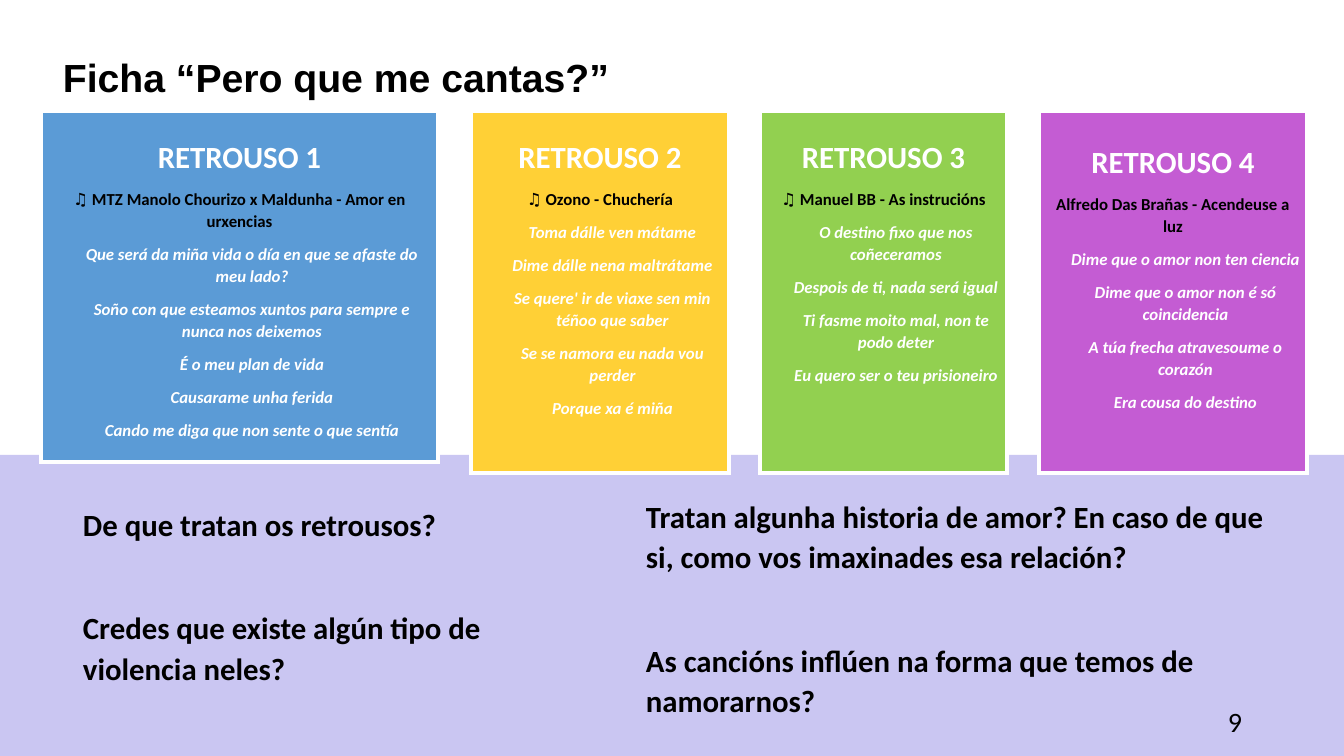
from lxml import etree
from pptx import Presentation
from pptx import util as u
from pptx.dml.color import RGBColor
from pptx.enum import shapes, text
from pptx.oxml import ns

WHITE = RGBColor(0xFF, 0xFF, 0xFF)
BLACK = RGBColor(0, 0, 0)
LILAC = RGBColor(0xCA, 0xC6, 0xF2)
BLUE = RGBColor(0x5B, 0x9B, 0xD6)
GOLD = RGBColor(0xFF, 0xD0, 0x36)
GREEN = RGBColor(0x92, 0xD0, 0x50)
PURPLE = RGBColor(0xC4, 0x5C, 0xD3)

CARDS = [
    (41, 397, 351, 26, BLUE, "RETROUSO 1",
     "♫ MTZ Manolo Chourizo x Maldunha - Amor en urxencias",
     ["Que será da miña vida o día en que se afaste do meu lado?",
      "Soño con que esteamos xuntos para sempre e nunca nos deixemos",
      "É o meu plan de vida",
      "Causarame unha ferida",
      "Cando me diga que non sente o que sentía"]),
    (471, 258, 362, 26, GOLD, "RETROUSO 2",
     "♫ Ozono - Chuchería",
     ["Toma dálle ven mátame",
      "Dime dálle nena maltrátame",
      "Se quere' ir de viaxe sen min téñoo que saber",
      "Se se namora eu nada vou perder",
      "Porque xa é miña"]),
    (760, 247, 362, 26, GREEN, "RETROUSO 3",
     "♫ Manuel BB - As instrucións",
     ["O destino fixo que nos coñeceramos",
      "Despois de ti, nada será igual",
      "Ti fasme moito mal, non te podo deter",
      "Eu quero ser o teu prisioneiro"]),
    (1039, 268, 362, 31, PURPLE, "RETROUSO 4",
     "Alfredo Das Brañas - Acendeuse a luz",
     ["Dime que o amor non ten ciencia",
      "Dime que o amor non é só coincidencia",
      "A túa frecha atravesoume o corazón",
      "Era cousa do destino"]),
]

ASKS = [
    (76, 505, 463, ["De que tratan os retrousos?",
                    "Credes que existe algún tipo de violencia neles?"]),
    (639, 497, 632, ["Tratan algunha historia de amor? En caso de que si, "
                     "como vos imaxinades esa relación?",
                     "As cancións inflúen na forma que temos de namorarnos?"]),
]


def px(n):
    return u.Emu(round(n * 12192000 / 1344))


def style(para, size, color=BLACK, font="Calibri", bold=True, slant=False):
    for run in para.runs:
        face = run.font
        face.name = font
        face.size = u.Pt(size)
        face.bold = bold
        face.italic = slant
        face.color.rgb = color


def space(para, align=text.PP_ALIGN.LEFT):
    para.alignment = align
    para.line_spacing = 1.07
    para.space_after = u.Pt(8)


def edge(cell, color=None):
    props = cell._tc.get_or_add_tcPr()
    for side in ("a:lnL", "a:lnR", "a:lnT", "a:lnB"):
        line = etree.SubElement(props, ns.qn(side))
        if color is None:
            etree.SubElement(line, ns.qn("a:noFill"))
        else:
            line.set("w", str(u.Pt(3)))
            fill = etree.SubElement(line, ns.qn("a:solidFill"))
            etree.SubElement(fill, ns.qn("a:srgbClr")).set("val", str(color))


def add_cell(slide, left, top, width, height, line=None, fill=None):
    table = slide.shapes.add_table(
        1, 1, px(left), px(top), px(width), px(height)).table
    table.first_row = False
    table.horz_banding = False
    cell = table.cell(0, 0)
    cell.margin_left = cell.margin_right = px(7)
    cell.margin_top = cell.margin_bottom = 0
    edge(cell, line)
    if fill is None:
        cell.fill.background()
    else:
        cell.fill.solid()
        cell.fill.fore_color.rgb = fill
    return cell


def add_card(slide, left, width, height, inset, color, name, song, lines):
    cell = add_cell(slide, left, 111, width, height, WHITE, color)
    cell.margin_top = px(inset)
    frame = cell.text_frame
    frame.text = "\n".join([name, song] + lines)
    head, tune, *verse = frame.paragraphs
    for para in frame.paragraphs:
        space(para, text.PP_ALIGN.CENTER)
    style(head, 22, WHITE)
    style(tune, 12)
    for para in verse:
        para._p.get_or_add_pPr().set("marL", str(px(25)))
        style(para, 12, WHITE, slant=True)


def add_asks(slide, left, top, width, lines):
    frame = add_cell(slide, left, top, width, 135).text_frame
    frame.text = "\n".join(lines)
    for para in frame.paragraphs:
        space(para)
        style(para, 22)
    frame.paragraphs[1].space_before = u.Pt(37)


def add_text(slide, left, top, width, height, words):
    frame = slide.shapes.add_textbox(
        px(left), px(top), px(width), px(height)).text_frame
    frame.word_wrap = True
    frame.text = words
    return frame


def add_band(slide):
    band = slide.shapes.add_shape(
        shapes.MSO_SHAPE.RECTANGLE, 0, px(455), px(1344), px(301))
    band.shadow.inherit = False
    band.fill.solid()
    band.fill.fore_color.rgb = LILAC
    band.line.fill.background()


def main():
    deck = Presentation()
    deck.slide_width, deck.slide_height = px(1344), px(756)
    slide = deck.slides.add_slide(deck.slide_layouts[6])
    add_band(slide)
    for card in CARDS:
        add_card(slide, *card)
    for ask in ASKS:
        add_asks(slide, *ask)

    page = add_text(slide, 950, 701, 302, 40, "9")
    page.vertical_anchor = text.MSO_ANCHOR.MIDDLE
    page.paragraphs[0].alignment = text.PP_ALIGN.RIGHT
    style(page.paragraphs[0], 20, bold=False)

    title = add_text(slide, 53, 45, 1170, 57, "Ficha “Pero que me cantas?”")
    space(title.paragraphs[0])
    style(title.paragraphs[0], 28, font="Arial")
    deck.save("out.pptx")


if __name__ == "__main__":
    main()
